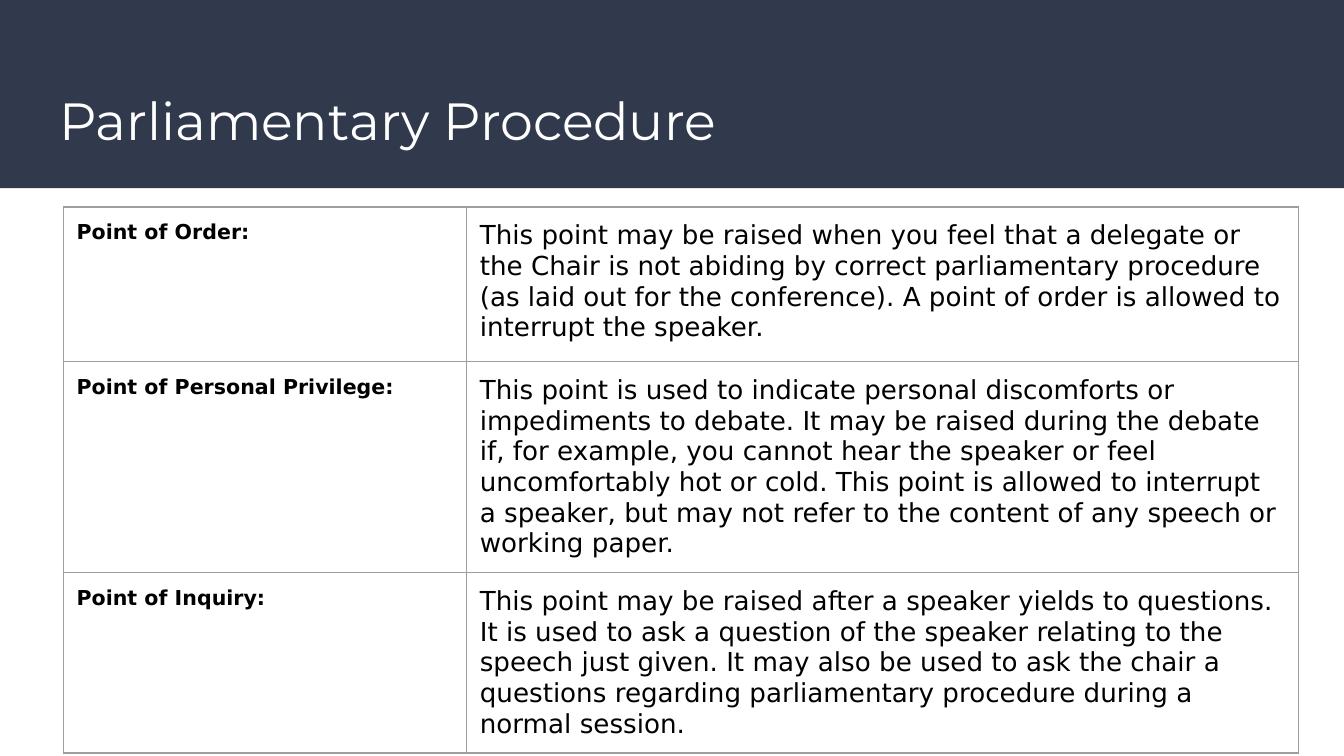
from lxml import etree
from pptx import Presentation
from pptx.dml.color import RGBColor
from pptx.enum.shapes import MSO_SHAPE
from pptx.enum.text import MSO_ANCHOR, PP_ALIGN
from pptx.oxml.ns import qn
from pptx.util import Inches, Pt

RECTANGLE = MSO_SHAPE.RECTANGLE
MIDDLE, TOP = MSO_ANCHOR.MIDDLE, MSO_ANCHOR.TOP
LEFT = PP_ALIGN.LEFT

TITLE = "Parliamentary Procedure"
POINTS = [
    ("Point of Order:",
     "This point may be raised when you feel that a delegate or the Chair is not "
     "abiding by correct parliamentary procedure (as laid out for the conference). "
     "A point of order is allowed to interrupt the speaker."),
    ("Point of Personal Privilege:",
     "This point is used to indicate personal discomforts or impediments to debate. "
     "It may be raised during the debate if, for example, you cannot hear the speaker "
     "or feel uncomfortably hot or cold. This point is allowed to interrupt a speaker, "
     "but may not refer to the content of any speech or working paper."),
    ("Point of Inquiry:",
     "This point may be raised after a speaker yields to questions. It is used to ask "
     "a question of the speaker relating to the speech just given. It may also be used "
     "to ask the chair a questions regarding parliamentary procedure during a normal "
     "session."),
]

COLORS = {"band": "31394D", "title": "FFFFFF", "text": "000000", "border": "9E9E9E"}
TITLE_FONT = {"name": "Montserrat", "size": Pt(28), "bold": False}
COLUMN_FONTS = [
    {"name": "DejaVu Sans", "size": Pt(11), "bold": True},
    {"name": "DejaVu Sans", "size": Pt(14), "bold": False},
]
COLUMN_WIDTHS = [3, 6.19]
ROW_HEIGHTS = [1.15, 1.37, 1.15]
MARGINS = {f"margin_{side}": Inches(0.1) for side in ("left", "top", "right", "bottom")}


def set_all(target, values):
    for name, value in values.items():
        setattr(target, name, value)


def write(frame, text, font, color):
    para = frame.paragraphs[0]
    para.alignment = LEFT
    span = para.add_run()
    span.text = text
    set_all(span.font, font)
    span.font.color.rgb = RGBColor.from_string(color)


def add_borders(cell):
    properties = cell._tc.get_or_add_tcPr()
    for edge in ("a:lnL", "a:lnR", "a:lnT", "a:lnB"):
        line = etree.SubElement(properties, qn(edge), w=str(Pt(0.75)))
        fill = etree.SubElement(line, qn("a:solidFill"))
        etree.SubElement(fill, qn("a:srgbClr"), val=COLORS["border"])


def add_band(page, width):
    band = page.shapes.add_shape(RECTANGLE, 0, 0, width, Inches(1.4))
    band.shadow.inherit = False
    band.fill.solid()
    band.fill.fore_color.rgb = RGBColor.from_string(COLORS["band"])
    band.line.fill.background()
    page.shapes._spTree.insert(2, band._element)


def add_title(page):
    title = page.shapes.title
    set_all(title, {"left": Inches(0.34), "top": Inches(0.55),
                    "width": Inches(9.32), "height": Inches(0.68)})
    set_all(title.text_frame, {**MARGINS, "word_wrap": True, "vertical_anchor": MIDDLE})
    write(title.text_frame, TITLE, TITLE_FONT, COLORS["title"])


def add_points(page):
    table = page.shapes.add_table(
        len(POINTS), len(COLUMN_WIDTHS), Inches(0.47), Inches(1.54),
        Inches(sum(COLUMN_WIDTHS)), Inches(sum(ROW_HEIGHTS))).table
    set_all(table, {"first_row": False, "horz_banding": False})
    for column, width in zip(table.columns, COLUMN_WIDTHS):
        column.width = Inches(width)
    for row, height, texts in zip(table.rows, ROW_HEIGHTS, POINTS):
        row.height = Inches(height)
        for cell, text, font in zip(row.cells, texts, COLUMN_FONTS):
            set_all(cell, {**MARGINS, "vertical_anchor": TOP})
            add_borders(cell)
            cell.fill.background()
            write(cell.text_frame, text, font, COLORS["text"])


def main():
    deck = Presentation()
    deck.slide_width = Inches(10)
    deck.slide_height = deck.slide_width * 9 // 16
    page = deck.slides.add_slide(deck.slide_layouts.get_by_name("Title Only"))
    add_band(page, deck.slide_width)
    add_title(page)
    add_points(page)
    deck.save("out.pptx")


if __name__ == "__main__":
    main()
